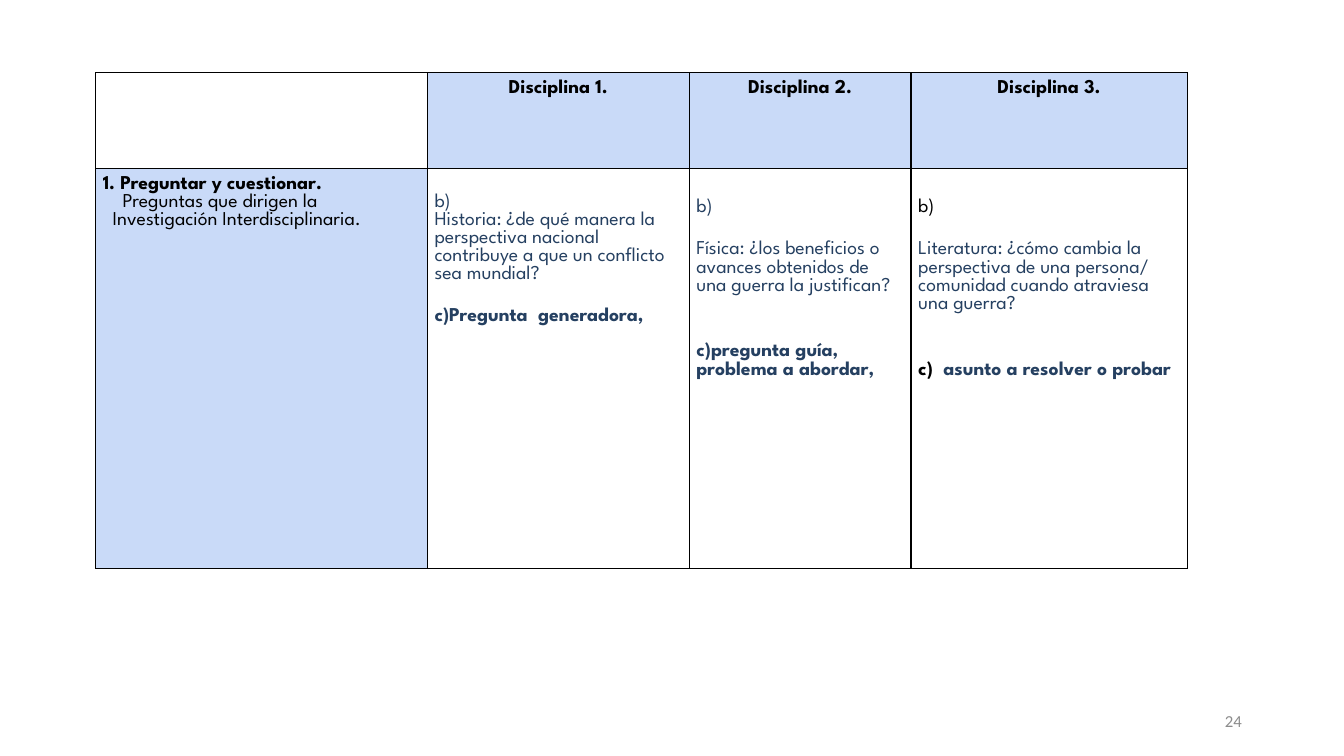
from dataclasses import dataclass
from pptx import Presentation
from pptx.dml.color import RGBColor
from pptx.enum import text as t
from pptx.oxml import parse_xml
from pptx.oxml.ns import nsdecls
from pptx.util import Cm, Pt


@dataclass(frozen=True)
class Theme:
    ink: str = "000000"
    navy: str = "254061"
    gray: str = "8C8C8C"
    pale: str = "C9DAF8"
    face: str = "League Spartan"
    plain: str = "Calibri"
    body: int = 14
    small: int = 12


look = Theme()


def write(para, text, color=look.ink, bold=False, size=look.body, face=look.face):
    run = para.add_run()
    run.text = text
    run.font.name = face
    run.font.size = Pt(size)
    run.font.bold = bold
    run.font.color.rgb = RGBColor.from_string(color)


def rule(cell):
    """Draw a thin line on all four sides of a cell."""
    props = cell._tc.get_or_add_tcPr()
    for spot, side in enumerate(("lnL", "lnR", "lnT", "lnB")):
        line = parse_xml(
            f'<a:{side} {nsdecls("a")} w="12700"><a:solidFill>'
            f'<a:srgbClr val="{look.ink}"/></a:solidFill></a:{side}>')
        props.insert(spot, line)


deck = Presentation()
deck.slide_width, deck.slide_height = Cm(33.87), Cm(19.05)
slide = deck.slides.add_slide(deck.slide_layouts[6])

# Page number
page = slide.shapes.add_textbox(Cm(23.93), Cm(17.65), Cm(7.62), Cm(1.02)).text_frame
page.word_wrap = True
page.vertical_anchor = t.MSO_ANCHOR.MIDDLE
page.paragraphs[0].alignment = t.PP_ALIGN.RIGHT
write(page.paragraphs[0], "24", color=look.gray, size=look.small, face=look.plain)

# Table grid
wide = [8.36, 6.6, 5.59, 6.96]
high = [2.41, 10.08]
inset = 0.18
table = slide.shapes.add_table(
    2, 4, Cm(2.41), Cm(1.83), Cm(sum(wide)), Cm(sum(high))).table
table.first_row = table.horz_banding = False
for col, size in zip(table.columns, wide):
    col.width = Cm(size)
for row, size in zip(table.rows, high):
    row.height = Cm(size)

for r in range(2):
    for c in range(4):
        cell = table.cell(r, c)
        cell.margin_left = cell.margin_right = Cm(inset)
        cell.margin_top = cell.margin_bottom = Cm(inset)
        if (r == 0) != (c == 0):
            cell.fill.solid()
            cell.fill.fore_color.rgb = RGBColor.from_string(look.pale)
        else:
            cell.fill.background()
        rule(cell)

# Column heads
for c in range(1, 4):
    para = table.cell(0, c).text_frame.paragraphs[0]
    para.alignment = t.PP_ALIGN.CENTER
    write(para, f"Disciplina {c}.", bold=True)

# Row head: text, bold, first-line indent
frame = table.cell(1, 0).text_frame
frame.add_paragraph()
steps = [
    ("1. Preguntar y cuestionar.", True, -0.25),
    ("Preguntas que dirigen la Investigación Interdisciplinaria.", False, 0.25),
]
for para, (text, bold, shift) in zip(frame.paragraphs, steps):
    props = para._p.get_or_add_pPr()
    props.set("marL", str(Cm(0.25)))
    props.set("indent", str(Cm(shift)))
    write(para, text, bold=bold)

# Questions: space above the cell text (cm), then paragraphs as
# (space before in points, runs of text, colour, bold)
navy, ink = look.navy, look.ink
asks = [
    (0.46, [
        (0, [("b)", navy, False)]),
        (0, [("Historia: ¿de qué manera la perspectiva nacional contribuye "
              "a que un conflicto sea mundial?", navy, False)]),
        (17, [("c)Pregunta  generadora,", navy, True)]),
    ]),
    (0.6, [
        (0, [("b)", navy, False)]),
        (17, [("Física: ¿los beneficios o avances obtenidos de una guerra "
               "la justifican?", navy, False)]),
        (34, [("c)pregunta guía,  problema a abordar,", navy, True)]),
    ]),
    (0.6, [
        (0, [("b)", ink, False)]),
        (17, [("Literatura: ¿cómo cambia la perspectiva de una persona/ "
               "comunidad cuando atraviesa una guerra?", navy, False)]),
        (34, [("c)", ink, True), ("  asunto a resolver o probar", navy, True)]),
    ]),
]
for c, (space, lines) in enumerate(asks, 1):
    cell = table.cell(1, c)
    cell.margin_top = Cm(inset + space)
    for i, (gap, runs) in enumerate(lines):
        para = cell.text_frame.add_paragraph() if i else cell.text_frame.paragraphs[0]
        para.space_before = Pt(gap)
        for text, color, bold in runs:
            write(para, text, color=color, bold=bold)

deck.save("out.pptx")
